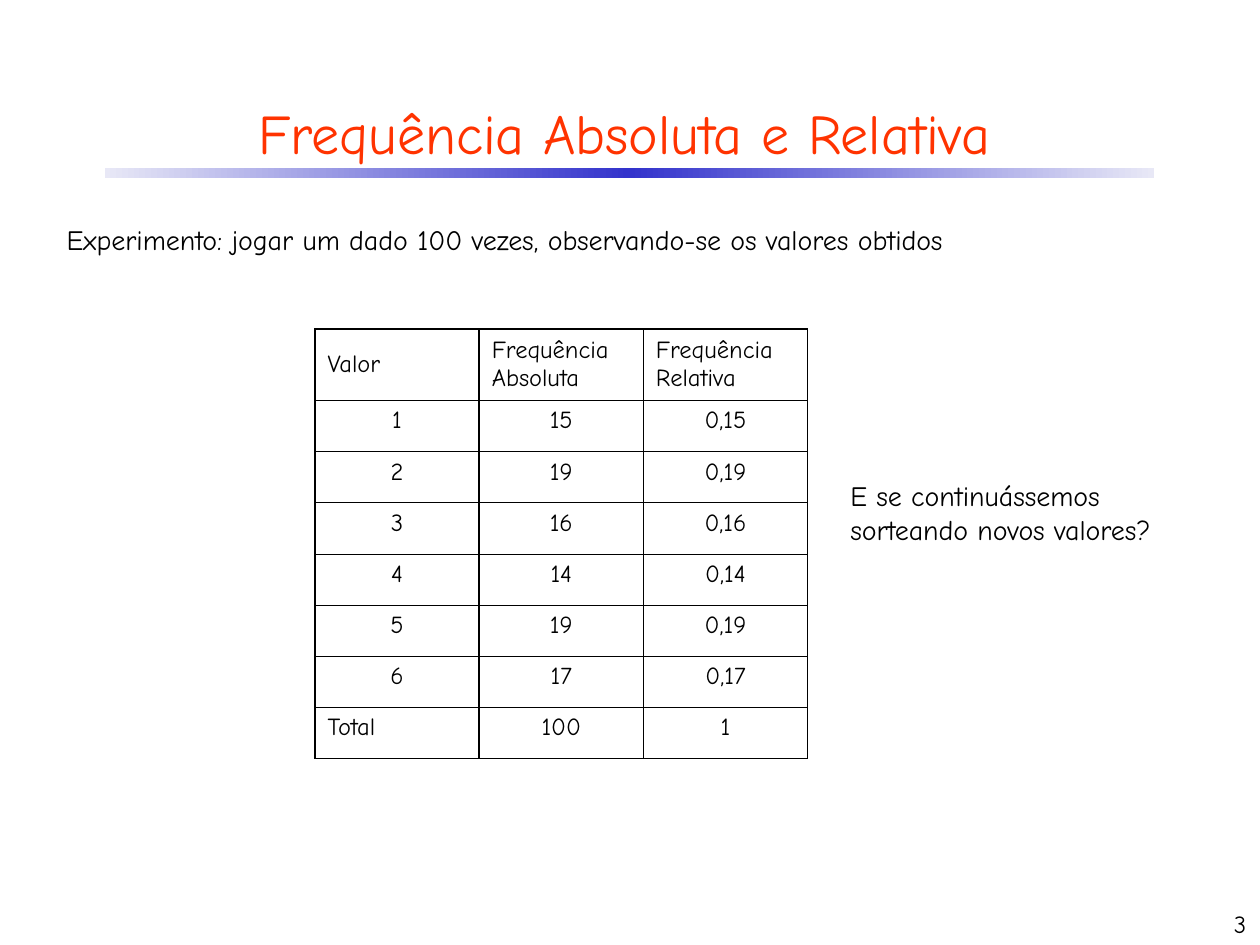
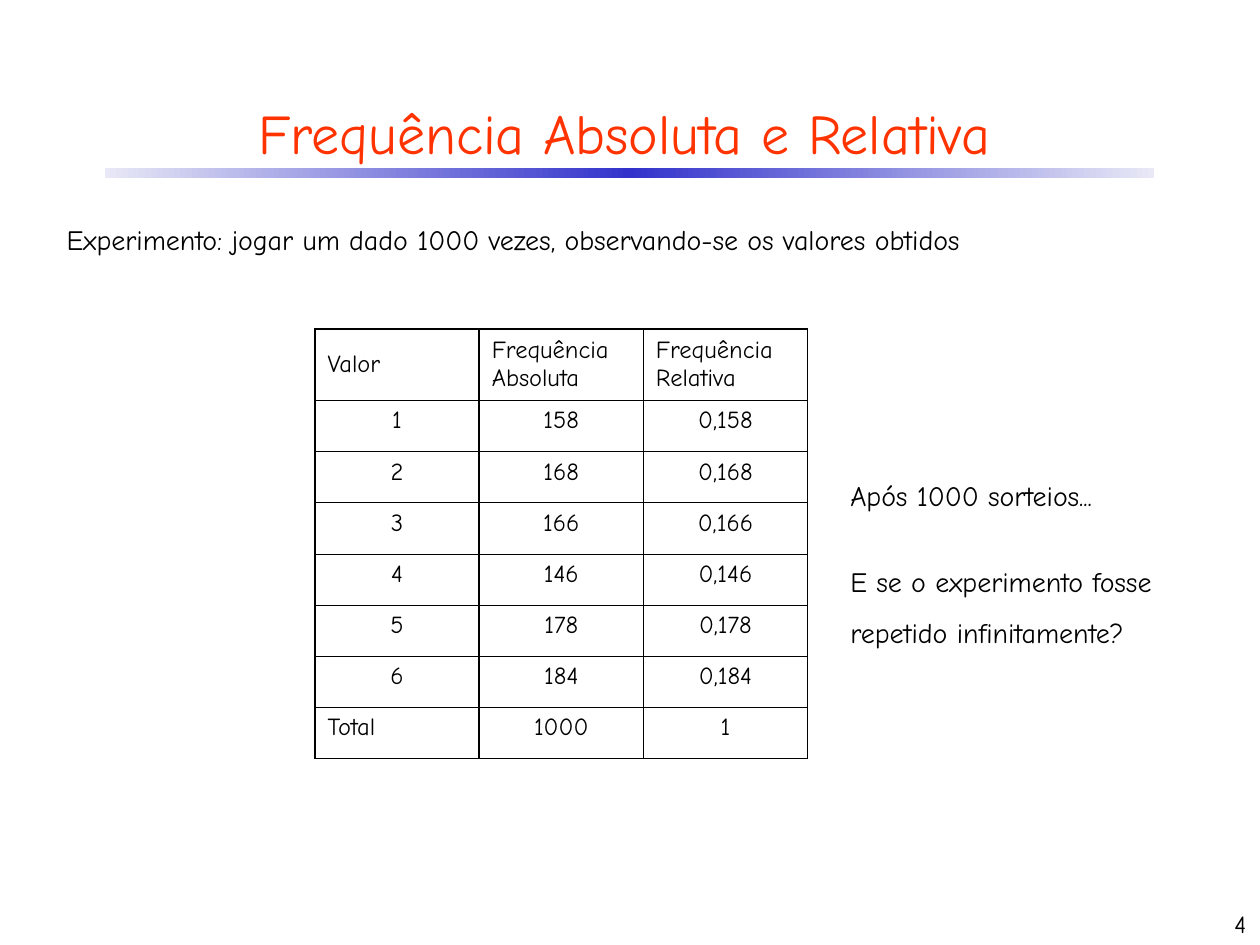
from copy import deepcopy
from dataclasses import dataclass

from lxml.etree import SubElement as Sub
from pptx import Presentation
from pptx.dml.color import RGBColor as Rgb
from pptx.enum.shapes import MSO_SHAPE as Kind
from pptx.enum.text import MSO_ANCHOR as Anchor, MSO_AUTO_SIZE as Auto, PP_ALIGN as Align
from pptx.oxml.ns import qn
from pptx.slide import Slide
from pptx.table import _Cell as Cell
from pptx.text.text import _Paragraph as Para
from pptx.util import Inches, Pt


@dataclass(frozen=True)
class Theme:
    font: str = "Comic Neue"
    ink: str = "000000"
    paper: str = "FFFFFF"
    title: str = "FF3300"
    band: tuple[str, ...] = ("E8E8F6", "3333CC", "E8E8F6")
    head: int = 32
    body: int = 16
    small: int = 14
    thick: float = 1
    thin: float = 0.5


@dataclass(frozen=True)
class Note:
    text: str
    box: tuple[float, float, float, float]
    size: int
    color: str
    align: Align = Align.LEFT
    anchor: Anchor = Anchor.TOP
    auto: Auto = Auto.NONE
    space: float = 1.0


@dataclass(frozen=True)
class Trial:
    page: int
    total: int
    counts: tuple[int, ...]
    notes: tuple[Note, ...]


THEME = Theme()
HEADS = ("Valor", "Frequência\nAbsoluta", "Frequência\nRelativa")


def remark(text: str, top: float, width: float, high: float, space: float = 1.0) -> Note:
    return Note(text, (6.65, top, width, high), THEME.body, THEME.ink,
                auto=Auto.SHAPE_TO_FIT_TEXT, space=space)


TRIALS = (
    Trial(3, 100, (15, 19, 16, 14, 19, 17), (
        remark("E se continuássemos sorteando novos valores?", 3.75, 3.07, 0.64),
    )),
    Trial(4, 1000, (158, 168, 166, 146, 178, 184), (
        remark("Após 1000 sorteios...", 3.75, 2.76, 0.37),
        remark("E se o experimento fosse repetido infinitamente?", 4.3, 2.76, 1.27, 1.5),
    )),
)


def style(para: Para, text: str, size: int, color: str, align: Align) -> None:
    para.text = text
    para.alignment = align
    for run in para.runs:
        for key, value in {"name": THEME.font, "size": Pt(size)}.items():
            setattr(run.font, key, value)
        run.font.color.rgb = Rgb.from_string(color)


def write(slide: Slide, note: Note) -> None:
    frame = slide.shapes.add_textbox(*map(Inches, note.box)).text_frame
    look = {"word_wrap": True, "auto_size": note.auto, "vertical_anchor": note.anchor}
    for key, value in look.items():
        setattr(frame, key, value)
    para = frame.paragraphs[0]
    style(para, note.text, note.size, note.color, note.align)
    para.line_spacing = note.space


def draw_band(slide: Slide) -> None:
    band = slide.shapes.add_shape(Kind.RECTANGLE, *map(Inches, (0.83, 1.33, 8.33, 0.08)))
    band.shadow.inherit = False
    band.line.fill.background()
    band.fill.gradient()
    band.fill.gradient_angle = 0
    stops = band._element.spPr.find(".//" + qn("a:gsLst"))
    stops.append(deepcopy(stops[0]))
    for i, (stop, color) in enumerate(zip(band.fill.gradient_stops, THEME.band)):
        stop.position = i / 2
        stop.color.rgb = Rgb.from_string(color)


def edge(cell: Cell, side: str, width: float) -> None:
    line = Sub(cell._tc.get_or_add_tcPr(), qn(f"a:ln{side}"), w=str(Pt(width)))
    fill = Sub(line, qn("a:solidFill"))
    Sub(fill, qn("a:srgbClr"), val=THEME.ink)


def draw_grid(slide: Slide, trial: Trial) -> None:
    places = len(str(trial.total)) - 1
    rows = [HEADS]
    for face, count in enumerate(trial.counts, 1):
        share = f"{count / trial.total:.{places}f}".replace(".", ",")
        rows.append((str(face), str(count), share))
    rows.append(("Total", str(trial.total), "1"))

    width, high, top = 3.91, 3.41, 0.57
    last = len(rows) - 1
    box = map(Inches, (2.5, 2.61, width, high))
    grid = slide.shapes.add_table(len(rows), len(HEADS), *box).table
    grid.first_row = grid.horz_banding = False
    for col in grid.columns:
        col.width = Inches(width / len(HEADS))
    for r, texts in enumerate(rows):
        grid.rows[r].height = Inches((high - top) / last if r else top)
        for c, text in enumerate(texts):
            cell = grid.cell(r, c)
            sides = {
                "L": THEME.thick,
                "R": THEME.thick,
                "T": THEME.thick if r < 2 else THEME.thin,
                "B": THEME.thick if r in (0, last) else THEME.thin,
            }
            for side, size in sides.items():
                edge(cell, side, size)
            cell.fill.solid()
            cell.fill.fore_color.rgb = Rgb.from_string(THEME.paper)
            cell.vertical_anchor = Anchor.TOP if r else Anchor.MIDDLE
            left = r == 0 or (r == last and c == 0)
            style(cell.text_frame.paragraphs[0], text, THEME.small, THEME.ink,
                  Align.LEFT if left else Align.CENTER)


def build(slide: Slide, trial: Trial) -> None:
    draw_band(slide)
    draw_grid(slide, trial)
    shared = (
        Note("Frequência Absoluta e Relativa", (0.33, 0.67, 9.25, 0.75),
             THEME.head, THEME.title, Align.CENTER, Anchor.MIDDLE),
        Note(str(trial.page), (7.91, 7, 2.08, 0.5),
             THEME.small, THEME.ink, Align.RIGHT, Anchor.BOTTOM),
        Note(f"Experimento: jogar um dado {trial.total} vezes, observando-se os valores obtidos",
             (0.43, 1.72, 9.14, 0.37), THEME.body, THEME.ink, auto=Auto.SHAPE_TO_FIT_TEXT),
    )
    for note in shared + trial.notes:
        write(slide, note)


def main() -> None:
    deck = Presentation()
    deck.slide_width, deck.slide_height = Inches(10), Inches(7.5)
    for trial in TRIALS:
        build(deck.slides.add_slide(deck.slide_layouts[6]), trial)
    deck.save("out.pptx")


if __name__ == "__main__":
    main()
